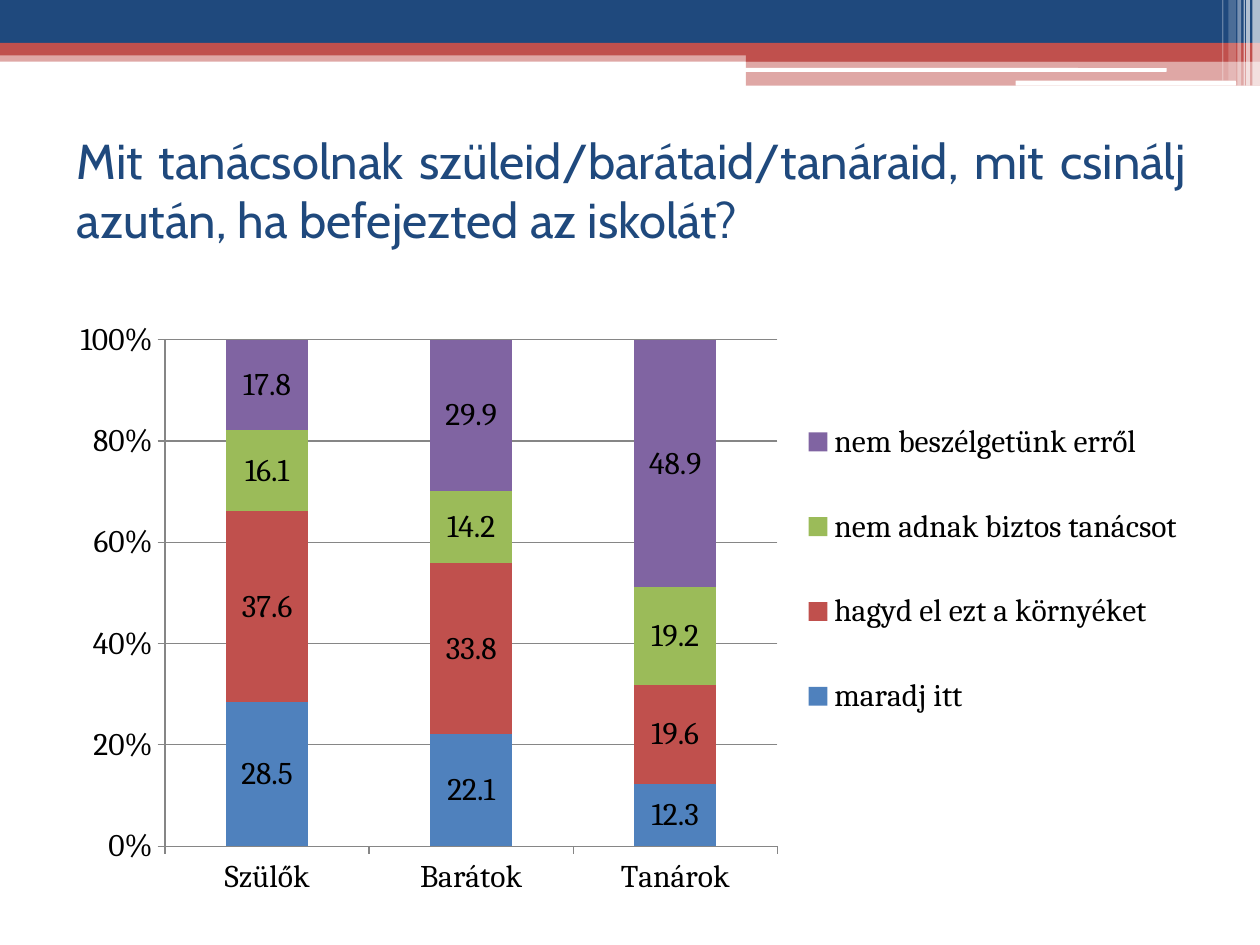
import pptx
import pptx.chart.data
import pptx.dml.color
import pptx.enum.chart
import pptx.enum.shapes
import pptx.enum.text
import pptx.oxml
import pptx.oxml.ns
import pptx.util
from pptx.util import Inches

NAVY, RED, WHITE, BLACK, GRAY = "1F497D", "C0504D", "FFFFFF", "000000", "868686"


def color(hex_code):
    return pptx.dml.color.RGBColor.from_string(hex_code)


class SurveySlide:
    """Holds the style and the current slide, with one method per kind of element."""

    title_font, chart_font = "Cabin", "Cambria"
    title_size, chart_size = pptx.util.Pt(28), pptx.util.Pt(18)

    def __init__(self, presentation):
        self.slide = presentation.slides.add_slide(presentation.slide_layouts[5])

    def band(self, left, top, width, height, fill, opacity=100, rounded=False):
        kinds = pptx.enum.shapes.MSO_SHAPE
        band = self.slide.shapes.add_shape(
            kinds.ROUNDED_RECTANGLE if rounded else kinds.RECTANGLE,
            Inches(left), Inches(top), Inches(width), Inches(height))
        band.shadow.inherit = False
        band.line.fill.background()
        band.fill.solid()
        band.fill.fore_color.rgb = color(fill)
        if opacity < 100:
            fill_color = band.element.xpath("./p:spPr/a:solidFill/a:srgbClr")[0]
            alpha = pptx.oxml.ns.qn("a:alpha")
            fill_color.makeelement(alpha)
            fill_color.append(fill_color.makeelement(alpha, {"val": str(opacity * 1000)}))

    def title(self, text, left, top, width, height):
        title = self.slide.shapes.title
        title.left, title.top = Inches(left), Inches(top)
        title.width, title.height = Inches(width), Inches(height)
        frame = title.text_frame
        frame.text = text
        frame.word_wrap = True
        frame.vertical_anchor = pptx.enum.text.MSO_ANCHOR.MIDDLE
        heading = frame.paragraphs[0]
        heading.alignment = pptx.enum.text.PP_ALIGN.JUSTIFY
        heading.font.name, heading.font.size = self.title_font, self.title_size
        heading.font.color.rgb = color(NAVY)

    def stacked_chart(self, categories, answers, left, top, width, height):
        data = pptx.chart.data.CategoryChartData(number_format="0.0")
        data.categories = categories
        for name, values, _ in answers:
            data.add_series(name, values)
        chart = self.slide.shapes.add_chart(
            pptx.enum.chart.XL_CHART_TYPE.COLUMN_STACKED_100,
            Inches(left), Inches(top), Inches(width), Inches(height), data).chart
        chart.has_title = False
        chart.font.name, chart.font.size = self.chart_font, self.chart_size
        chart.font.color.rgb = color(BLACK)

        plot = chart.plots[0]
        plot.gap_width, plot.overlap = 150, 100
        plot.vary_by_categories = False
        for series, (_, _, fill) in zip(plot.series, answers):
            series.format.fill.solid()
            series.format.fill.fore_color.rgb = color(fill)
            series.data_labels.show_value = True

        shares = chart.value_axis
        shares.minimum_scale, shares.maximum_scale, shares.major_unit = 0, 1, 0.2
        shares.tick_labels.number_format = "0%"
        shares.tick_labels.number_format_is_linked = False
        shares.has_major_gridlines = True
        for line in (shares.format.line, chart.category_axis.format.line,
                     shares.major_gridlines.format.line):
            line.color.rgb = color(GRAY)
            line.width = pptx.util.Pt(0.75)
        for axis in (shares, chart.category_axis):
            axis.major_tick_mark = pptx.enum.chart.XL_TICK_MARK.OUTSIDE

        chart.has_legend = True
        chart.legend.position = pptx.enum.chart.XL_LEGEND_POSITION.RIGHT
        chart.legend.include_in_layout = False
        self.place(chart, "c:plotArea", 0.09, 0.05, 0.54, 0.85, inner=True)
        self.place(chart, "c:legend", 0.65, 0.11, 0.34, 0.65)

    def place(self, chart, part, x, y, w, h, inner=False):
        owner = chart.element.xpath(f"./c:chart/{part}")[0]
        for automatic in owner.xpath("./c:layout"):
            owner.remove(automatic)
        target = '<c:layoutTarget val="inner"/>' if inner else ""
        sizes = "".join(f'<c:{tag} val="{value}"/>' for tag, value in
                        (("xMode", "edge"), ("yMode", "edge"),
                         ("x", x), ("y", y), ("w", w), ("h", h)))
        layout = pptx.oxml.parse_xml(
            f'<c:layout {pptx.oxml.ns.nsdecls("c")}><c:manualLayout>'
            f"{target}{sizes}</c:manualLayout></c:layout>")
        owner.insert(len(owner.xpath("./c:legendPos")), layout)


def main():
    presentation = pptx.Presentation()
    presentation.slide_width, presentation.slide_height = Inches(10), Inches(7.5)
    survey = SurveySlide(presentation)

    survey.band(0, 0.4, 10, 0.09, RED, 50)
    survey.band(0, 0, 10, 0.34, NAVY)
    survey.band(0, 0.34, 10, 0.1, RED)
    survey.band(5.92, 0.39, 4.08, 0.1, RED)
    survey.band(5.92, 0.48, 4.08, 0.2, RED, 50)
    survey.band(5.91, 0.54, 3.35, 0.03, WHITE, rounded=True)
    survey.band(8.06, 0.64, 1.75, 0.04, WHITE, rounded=True)
    for left, width, height, opacity in (
            (9.94, 0.06, 0.68, 65), (9.89, 0.03, 0.68, 65), (9.87, 0.01, 0.68, 60),
            (9.82, 0.03, 0.68, 40), (9.75, 0.06, 0.64, 20), (9.7, 0.01, 0.64, 30)):
        survey.band(left, 0, width, height, WHITE, opacity)

    survey.title("Mit tanácsolnak szüleid/barátaid/tanáraid, mit csinálj azután, "
                 "ha befejezted az iskolát?", 0.51, 0.92, 9, 1.17)
    survey.stacked_chart(
        ("Szülők", "Barátok", "Tanárok"),
        (("maradj itt", (28.5, 22.1, 12.3), "4F81BD"),
         ("hagyd el ezt a környéket", (37.6, 33.8, 19.6), RED),
         ("nem adnak biztos tanácsot", (16.1, 14.2, 19.2), "9BBB59"),
         ("nem beszélgetünk erről", (17.8, 29.9, 48.9), "8064A2")),
        0.5, 2.46, 9, 4.73)
    presentation.save("out.pptx")


if __name__ == "__main__":
    main()
